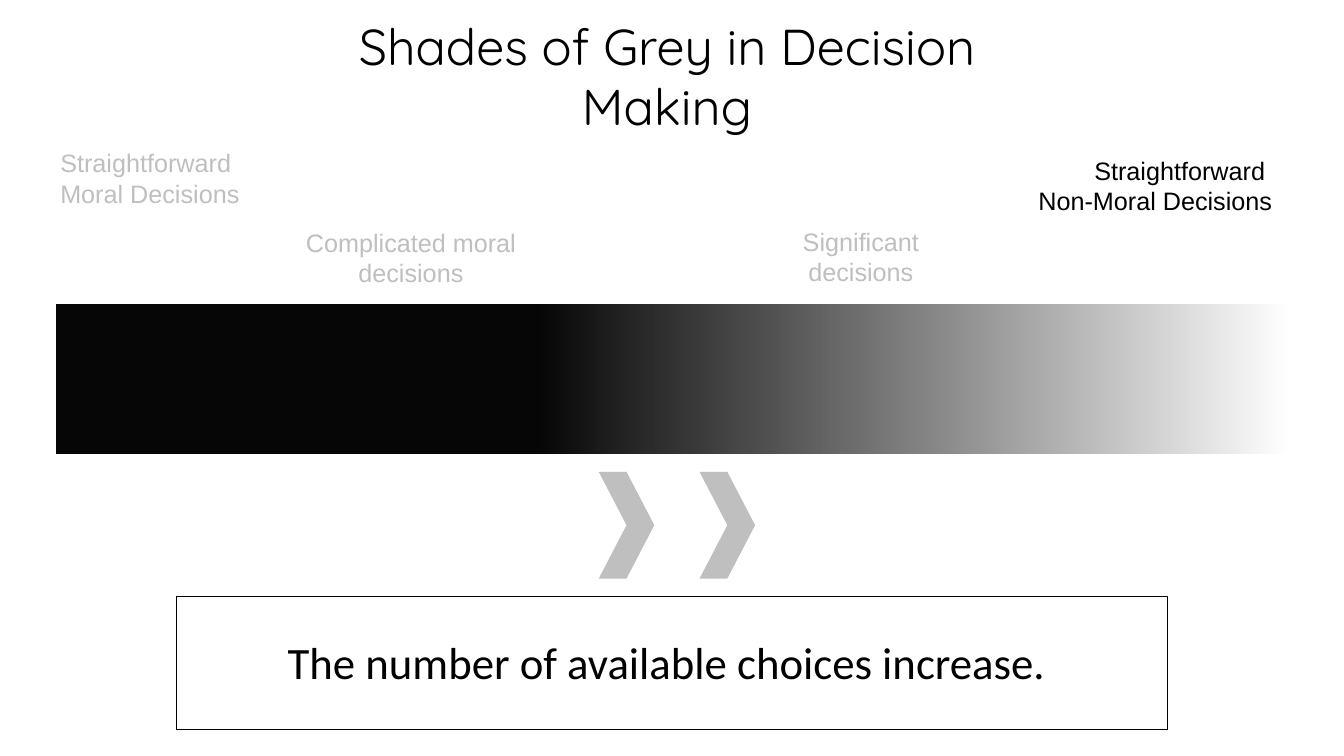
import dataclasses

import lxml.etree
import pptx
import pptx.dml.color
import pptx.enum.shapes
import pptx.enum.text
import pptx.oxml.ns
import pptx.shapes.autoshape
import pptx.slide
import pptx.util
from pptx.util import Cm

BLACK = pptx.dml.color.RGBColor(0x00, 0x00, 0x00)
WHITE = pptx.dml.color.RGBColor(0xFF, 0xFF, 0xFF)
GREY = pptx.dml.color.RGBColor(0xBF, 0xBF, 0xBF)

ALIGN = pptx.enum.text.PP_ALIGN
SHAPE = pptx.enum.shapes.MSO_SHAPE


@dataclasses.dataclass(frozen=True)
class Area:
    left: float
    top: float
    width: float
    height: float

    def lengths(self) -> tuple[Cm, Cm, Cm, Cm]:
        return Cm(self.left), Cm(self.top), Cm(self.width), Cm(self.height)


@dataclasses.dataclass(frozen=True)
class Caption:
    text: str
    area: Area
    align: ALIGN = ALIGN.CENTER
    color: pptx.dml.color.RGBColor = GREY
    font: str = "Arial"
    size: int = 18


TITLE = Caption("Shades of Grey in Decision Making", Area(7.4, 0.25, 18.82, 3.33),
                color=BLACK, font="Quicksand", size=36)
CAPTIONS = [
    Caption("Straightforward\nMoral Decisions", Area(1.27, 3.6, 7.2, 1.8), ALIGN.LEFT),
    Caption("Complicated moral decisions", Area(6.97, 5.6, 6.77, 1.8)),
    Caption("Significant decisions", Area(18.67, 5.58, 6.05, 1.8)),
    Caption("Straightforward \nNon-Moral Decisions", Area(23.42, 3.79, 8.89, 1.8),
            ALIGN.RIGHT, BLACK),
    Caption("The number of available choices increase. ", Area(4.45, 15.88, 24.97, 1.62),
            color=BLACK, font="Calibri", size=32),
]
SCALE = Area(1.4, 7.65, 31.04, 3.81)
FRAME = Area(4.45, 15.04, 24.97, 3.35)
CHEVRON = Area(15.09, 11.89, 1.4, 2.69)
CHEVRON_COUNT = 2
CHEVRON_PITCH = 2.54


def write_caption(box: pptx.shapes.autoshape.Shape, caption: Caption) -> None:
    box.left, box.top, box.width, box.height = caption.area.lengths()
    frame = box.text_frame
    frame.text = caption.text
    frame.word_wrap = True
    frame.auto_size = pptx.enum.text.MSO_AUTO_SIZE.SHAPE_TO_FIT_TEXT
    frame.vertical_anchor = pptx.enum.text.MSO_ANCHOR.TOP
    for para in frame.paragraphs:
        para.alignment = caption.align
        for span in para.runs:
            span.font.name = caption.font
            span.font.size = pptx.util.Pt(caption.size)
            span.font.color.rgb = caption.color


def add_plain_shape(page: pptx.slide.Slide, kind: SHAPE,
                    area: Area) -> pptx.shapes.autoshape.Shape:
    shape = page.shapes.add_shape(kind, *area.lengths())
    shape.shadow.inherit = False
    return shape


def add_scale(page: pptx.slide.Slide) -> None:
    scale = add_plain_shape(page, SHAPE.RECTANGLE, SCALE)
    scale.fill.gradient()
    scale.fill.gradient_angle = 0
    stops = scale.fill.gradient_stops
    for stop, position, color in zip(stops, (0.39, 1.0), (BLACK, WHITE)):
        stop.position = position
        stop.color.rgb = color
    # The dark end is slightly transparent
    dark = next(scale.element.iter(pptx.oxml.ns.qn("a:srgbClr")))
    lxml.etree.SubElement(dark, pptx.oxml.ns.qn("a:alpha"), val="97000")
    scale.line.color.rgb = WHITE
    scale.line.width = pptx.util.Pt(0.75)


def add_chevrons(page: pptx.slide.Slide) -> None:
    for index in range(CHEVRON_COUNT):
        area = dataclasses.replace(CHEVRON, left=CHEVRON.left + index * CHEVRON_PITCH)
        chevron = add_plain_shape(page, SHAPE.CHEVRON, area)
        chevron.fill.solid()
        chevron.fill.fore_color.rgb = GREY
        chevron.line.fill.background()


def add_frame(page: pptx.slide.Slide) -> None:
    frame = add_plain_shape(page, SHAPE.RECTANGLE, FRAME)
    frame.fill.background()
    frame.line.color.rgb = BLACK
    frame.line.width = pptx.util.Pt(0.5)


def main() -> None:
    deck = pptx.Presentation()
    deck.slide_width, deck.slide_height = Cm(33.87), Cm(19.05)
    page = deck.slides.add_slide(deck.slide_layouts.get_by_name("Title Only"))

    # Title
    write_caption(page.shapes.title, TITLE)

    # Scale from dark to light, with its direction
    add_scale(page)
    add_chevrons(page)

    # Captions and the framed conclusion
    for caption in CAPTIONS:
        write_caption(page.shapes.add_textbox(*caption.area.lengths()), caption)
    add_frame(page)

    deck.save("out.pptx")


if __name__ == "__main__":
    main()
